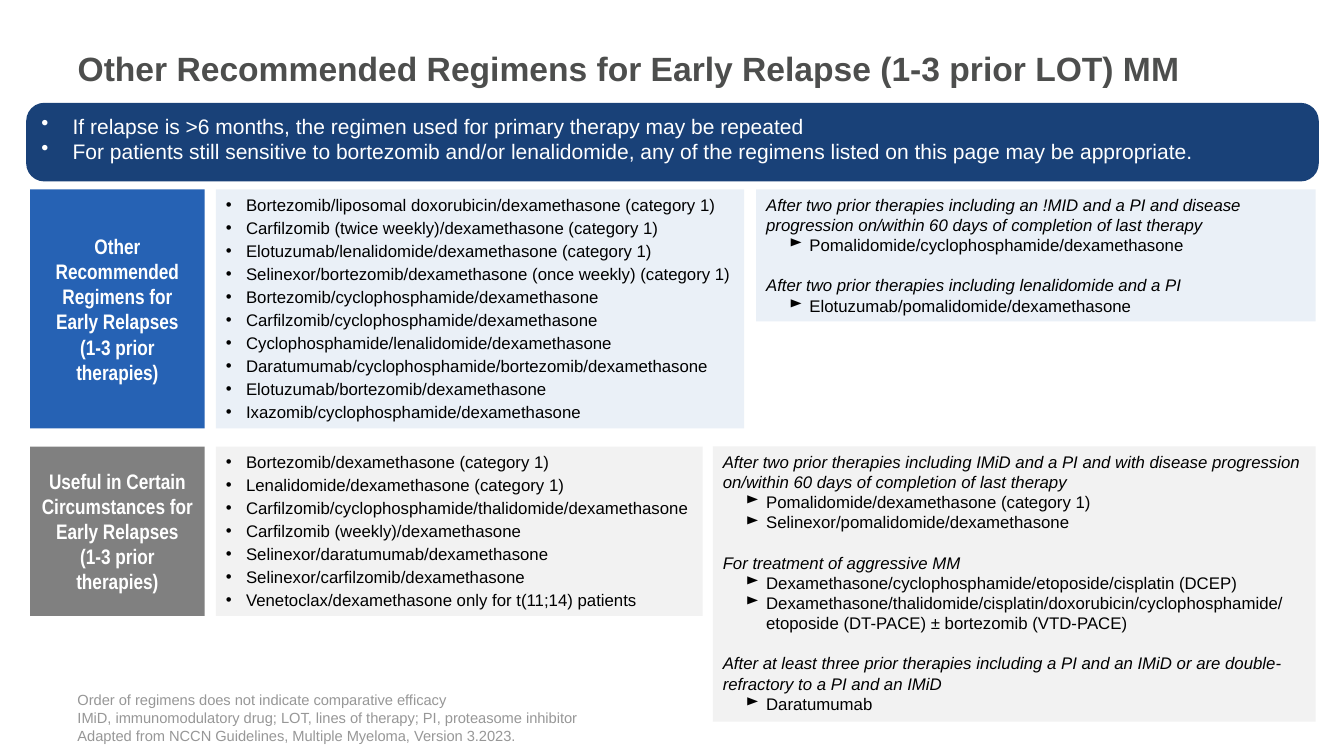
import pptx
import pptx.util
import pptx.dml.color
import pptx.enum.shapes
import pptx.enum.text
from lxml import etree

# Content
TITLE = "Other Recommended Regimens for Early Relapse (1-3 prior LOT) MM"
BANNER = [
    "If relapse is >6 months, the regimen used for primary therapy may be repeated",
    "For patients still sensitive to bortezomib and/or lenalidomide, any of the "
    "regimens listed on this page may be appropriate.",
]
NOTES = [
    "Order of regimens does not indicate comparative efficacy",
    "IMiD, immunomodulatory drug; LOT, lines of therapy; PI, proteasome inhibitor",
    "Adapted from NCCN Guidelines, Multiple Myeloma, Version 3.2023.",
]
BANDS = [
    {
        "label": "Other Recommended Regimens for Early Relapses\v(1-3 prior therapies)",
        "list": [
            "Bortezomib/liposomal doxorubicin/dexamethasone (category 1)",
            "Carfilzomib (twice weekly)/dexamethasone (category 1)",
            "Elotuzumab/lenalidomide/dexamethasone (category 1)",
            "Selinexor/bortezomib/dexamethasone (once weekly) (category 1)",
            "Bortezomib/cyclophosphamide/dexamethasone",
            "Carfilzomib/cyclophosphamide/dexamethasone",
            "Cyclophosphamide/lenalidomide/dexamethasone",
            "Daratumumab/cyclophosphamide/bortezomib/dexamethasone",
            "Elotuzumab/bortezomib/dexamethasone",
            "Ixazomib/cyclophosphamide/dexamethasone",
        ],
        "cases": [
            ("After two prior therapies including an !MID and a PI and disease "
             "progression on/within 60 days of completion of last therapy",
             ["Pomalidomide/cyclophosphamide/dexamethasone"]),
            ("After two prior therapies including lenalidomide and a PI",
             ["Elotuzumab/pomalidomide/dexamethasone"]),
        ],
        "dark": "blue", "pale": "ice",
    },
    {
        "label": "Useful in Certain Circumstances for Early Relapses\v(1-3 prior therapies)",
        "list": [
            "Bortezomib/dexamethasone (category 1)",
            "Lenalidomide/dexamethasone (category 1)",
            "Carfilzomib/cyclophosphamide/thalidomide/dexamethasone",
            "Carfilzomib (weekly)/dexamethasone",
            "Selinexor/daratumumab/dexamethasone",
            "Selinexor/carfilzomib/dexamethasone",
            "Venetoclax/dexamethasone only for t(11;14) patients",
        ],
        "cases": [
            ("After two prior therapies including IMiD and a PI and with disease "
             "progression on/within 60 days of completion of last therapy",
             ["Pomalidomide/dexamethasone (category 1)",
              "Selinexor/pomalidomide/dexamethasone"]),
            ("For treatment of aggressive MM",
             ["Dexamethasone/cyclophosphamide/etoposide/cisplatin (DCEP)",
              "Dexamethasone/thalidomide/cisplatin/doxorubicin/cyclophosphamide/\v"
              "etoposide (DT-PACE) ± bortezomib (VTD-PACE)"]),
            ("After at least three prior therapies including a PI and an IMiD or "
             "are double-refractory to a PI and an IMiD",
             ["Daratumumab"]),
        ],
        "dark": "gray", "pale": "mist",
    },
]
COLORS = {"navy": "194178", "blue": "2662B4", "gray": "808080", "ice": "EAF0F7",
          "mist": "F2F2F2", "title": "4D4E4D", "note": "979797",
          "white": "FFFFFF", "black": "000000"}

# Grid, in inches: shared left columns, right edge, and one row per band
LEFT, MID, EDGE = 0.3, 2.14, 13.05
LABEL = 1.73
ROWS = [  # top, list height, case height, list width, case left
    (1.88, 2.37, 1.31, 5.24, 7.5),
    (4.43, 1.68, 2.73, 4.83, 7.07),
]
INSET = 0.67

deck = pptx.Presentation()
deck.slide_width = pptx.util.Inches(13.33)
deck.slide_height = pptx.util.Inches(7.5)
slide = deck.slides.add_slide(deck.slide_layouts[3])
title, *bodies = slide.placeholders
ANCHOR = pptx.enum.text.MSO_ANCHOR
ALIGN = pptx.enum.text.PP_ALIGN
SHAPE = pptx.enum.shapes.MSO_SHAPE


def color(name):
    return pptx.dml.color.RGBColor.from_string(COLORS[name])


def place(box, *area):
    box.left, box.top, box.width, box.height = map(pptx.util.Inches, area)


def paint(box, name):
    box.fill.solid()
    box.fill.fore_color.rgb = color(name)
    box.line.fill.background()


def add_box(kind, area, name):
    box = slide.shapes.add_shape(kind, *map(pptx.util.Inches, area))
    box.shadow.inherit = False
    paint(box, name)
    return box


def fill_text(box, lines, anchor=ANCHOR.TOP):
    frame = box.text_frame
    frame.text = "\n".join(lines)
    frame.word_wrap = True
    frame.auto_size = pptx.enum.text.MSO_AUTO_SIZE.NONE
    frame.vertical_anchor = anchor
    return frame.paragraphs


def style(par, size, name, face="Arial", bold=False, align=ALIGN.LEFT, before=0, after=0):
    par.alignment = align
    par.space_before = pptx.util.Pt(before)
    par.space_after = pptx.util.Pt(after)
    for run in par.runs:
        run.font.size = pptx.util.Pt(size)
        run.font.name = face
        run.font.bold = bold
        run.font.color.rgb = color(name)


def add_mark(par, char, left, hang):
    props = par._p.get_or_add_pPr()
    props.set("marL", str(pptx.util.Inches(left)))
    props.set("indent", str(-pptx.util.Inches(hang)))
    mark = etree.SubElement(props, pptx.oxml.ns.qn("a:buChar"))
    mark.set("char", char)


# Title and footnotes
place(title, INSET, 0.33, 11.75, 0.7)
style(fill_text(title, [TITLE], ANCHOR.MIDDLE)[0], 24, "title", bold=True)
foot = slide.shapes.add_textbox(*map(pptx.util.Inches, (INSET, 6.95, 11.75, 0.48)))
for par in fill_text(foot, NOTES, ANCHOR.BOTTOM):
    style(par, 10.5, "note")

# Banner
banner = add_box(SHAPE.ROUNDED_RECTANGLE, (0.26, 1.02, 12.82, 0.78), "navy")
banner.adjustments[0] = 0.23
for par in fill_text(banner, BANNER):
    add_mark(par, "•", 0.31, 0.31)
    style(par, 15, "white")

# Bands: label, regimen list, special cases
for band, row, body in zip(BANDS, ROWS, bodies):
    top, tall, deep, wide, side = row
    label = add_box(SHAPE.RECTANGLE, (LEFT, top, LABEL, tall), band["dark"])
    for par in fill_text(label, [band["label"]], ANCHOR.MIDDLE):
        style(par, 15, "white", "Arial Narrow", True, ALIGN.CENTER)

    place(body, MID, top, wide, tall)
    paint(body, band["pale"])
    for par in fill_text(body, band["list"]):
        add_mark(par, "•", 0.2, 0.2)
        style(par, 12, "black", after=2)

    panel = add_box(SHAPE.RECTANGLE, (side, top, EDGE - side, deep), band["pale"])
    lines = [(text, head) for lead, drugs in band["cases"]
             for text, head in [(lead, True)] + [(drug, False) for drug in drugs]]
    pars = fill_text(panel, [text for text, head in lines])
    for spot, (par, (text, head)) in enumerate(zip(pars, lines)):
        if not head:
            add_mark(par, "►", 0.43, 0.2)
        style(par, 12, "black", before=14.4 if head and spot else 0)
        for run in par.runs:
            run.font.italic = head

deck.save("out.pptx")
